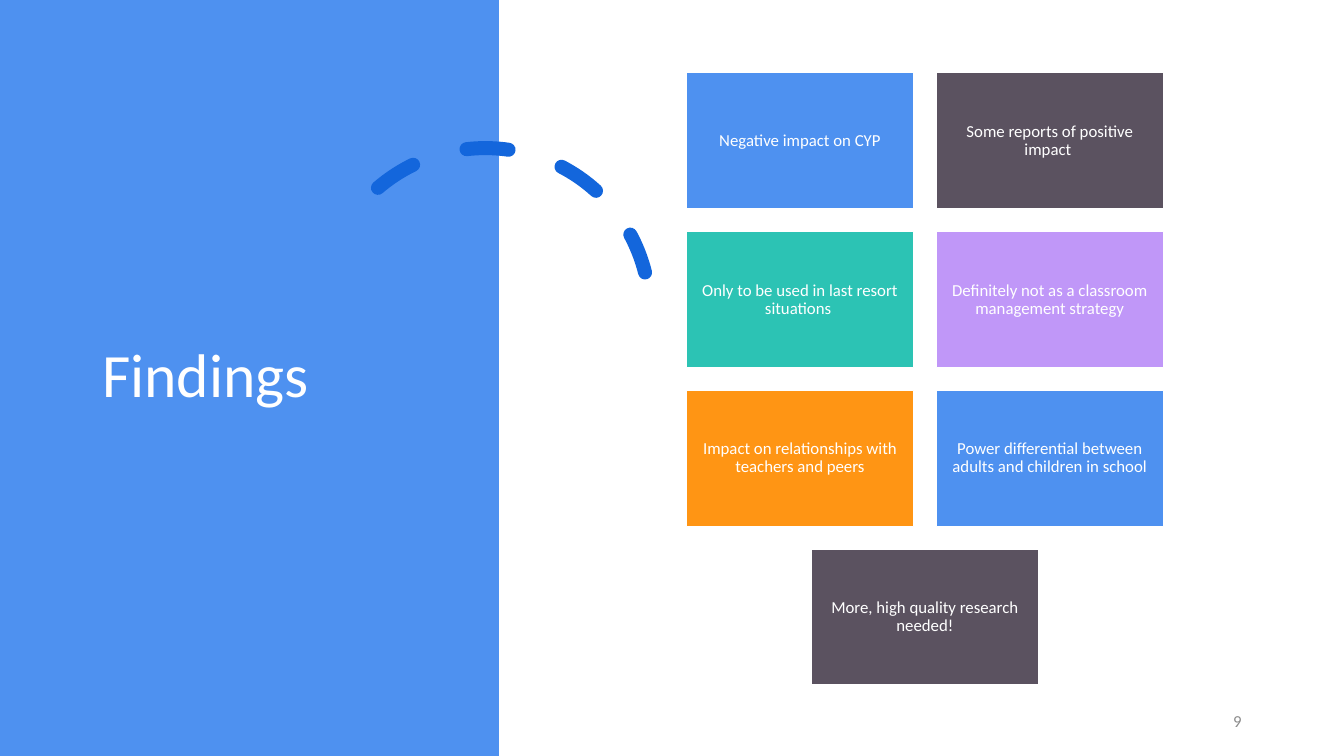
from lxml import etree
from pptx import Presentation
from pptx.dml.color import RGBColor
from pptx.enum.dml import MSO_LINE
from pptx.enum.shapes import MSO_SHAPE
from pptx.enum.text import MSO_ANCHOR, PP_ALIGN
from pptx.util import Pt

RECT, ARC = MSO_SHAPE.RECTANGLE, MSO_SHAPE.ARC
MIDDLE = MSO_ANCHOR.MIDDLE
LEFT, CENTER, RIGHT = PP_ALIGN.LEFT, PP_ALIGN.CENTER, PP_ALIGN.RIGHT
DASH = MSO_LINE.DASH

FONT = "Calibri"
WHITE, BLUE, DARK_BLUE, GREY = "FFFFFF", "4E91F0", "1366DC", "8C8C8C"
SLATE, TEAL, LILAC, ORANGE = "5B5260", "2CC3B4", "C097F8", "FF9514"

SLIDE_W, SLIDE_H = 960, 540
COLUMNS = 2
GRID_LEFT, GRID_TOP = 490.4, 52
TILE_W, TILE_H, GAP = 162.2, 97.2, 16.2
TILE_INSET = 3.6

FINDINGS = [
    ("Negative impact on CYP", BLUE),
    ("Some reports of positive impact ", SLATE),
    ("Only to be used in last resort situations ", TEAL),
    ("Definitely not as a classroom management strategy", LILAC),
    ("Impact on relationships with teachers and peers", ORANGE),
    ("Power differential between adults and children in school", BLUE),
    ("More, high quality research needed!", SLATE),
]


def rgb(color):
    return RGBColor.from_string(color)


def write(tf, text, size, color, align, spacing=None):
    tf.word_wrap = True
    tf.vertical_anchor = MIDDLE
    p = tf.paragraphs[0]
    p.alignment = align
    p.line_spacing = spacing
    r = p.add_run()
    r.text = text
    r.font.name = FONT
    r.font.size = Pt(size)
    r.font.color.rgb = rgb(color)


def add_label(s, box, text, size, color, align, spacing=None):
    sp = s.shapes.add_textbox(*map(Pt, box))
    write(sp.text_frame, text, size, color, align, spacing)


def add_rect(s, box, fill, line=None):
    sp = s.shapes.add_shape(RECT, *map(Pt, box))
    sp.shadow.inherit = False
    sp.fill.solid()
    sp.fill.fore_color.rgb = rgb(fill)
    if line:
        sp.line.color.rgb = rgb(line)
        sp.line.width = Pt(1)
    else:
        sp.line.fill.background()
    return sp


def add_dashed_arc(s, box):
    sp = s.shapes.add_shape(ARC, *map(Pt, box))
    sp.shadow.inherit = False
    sp.adjustments[0] = 146.129
    sp.adjustments[1] = 0
    sp.rotation = 345.8
    sp.fill.background()
    sp.line.color.rgb = rgb(DARK_BLUE)
    sp.line.width = Pt(10)
    sp.line.dash_style = DASH
    ln = sp.line.fill._xPr
    ln.set("cap", "rnd")
    etree.SubElement(ln, ln.tag.replace("}ln", "}round"))


def add_tile(s, box, text, fill):
    sp = add_rect(s, box, fill, WHITE)
    tf = sp.text_frame
    tf.margin_left = tf.margin_right = Pt(TILE_INSET)
    tf.margin_top = tf.margin_bottom = Pt(TILE_INSET)
    write(tf, text, 12, WHITE, CENTER, 0.9)


def add_findings(s):
    """Lay the tiles out in rows, centring a row that is not full."""
    for i, (text, fill) in enumerate(FINDINGS):
        row, col = divmod(i, COLUMNS)
        in_row = min(COLUMNS, len(FINDINGS) - row * COLUMNS)
        x = GRID_LEFT + (col + (COLUMNS - in_row) / 2) * (TILE_W + GAP)
        y = GRID_TOP + row * (TILE_H + GAP)
        add_tile(s, (x, y, TILE_W, TILE_H), text, fill)


def main():
    prs = Presentation()
    prs.slide_width, prs.slide_height = Pt(SLIDE_W), Pt(SLIDE_H)
    s = prs.slides.add_slide(prs.slide_layouts[6])
    s.background.fill.solid()
    s.background.fill.fore_color.rgb = rgb(WHITE)

    add_rect(s, (0, 0, 356.4, SLIDE_H), BLUE)
    add_dashed_arc(s, (229, 105.8, 235.4, 235.4))
    add_label(s, (66, 50.4, 232.6, 438.5), "Findings", 44, WHITE, LEFT, 0.9)
    add_label(s, (761, 500.5, 133, 28.8), "9", 12, GREY, RIGHT)
    add_findings(s)
    prs.save("out.pptx")


if __name__ == "__main__":
    main()
